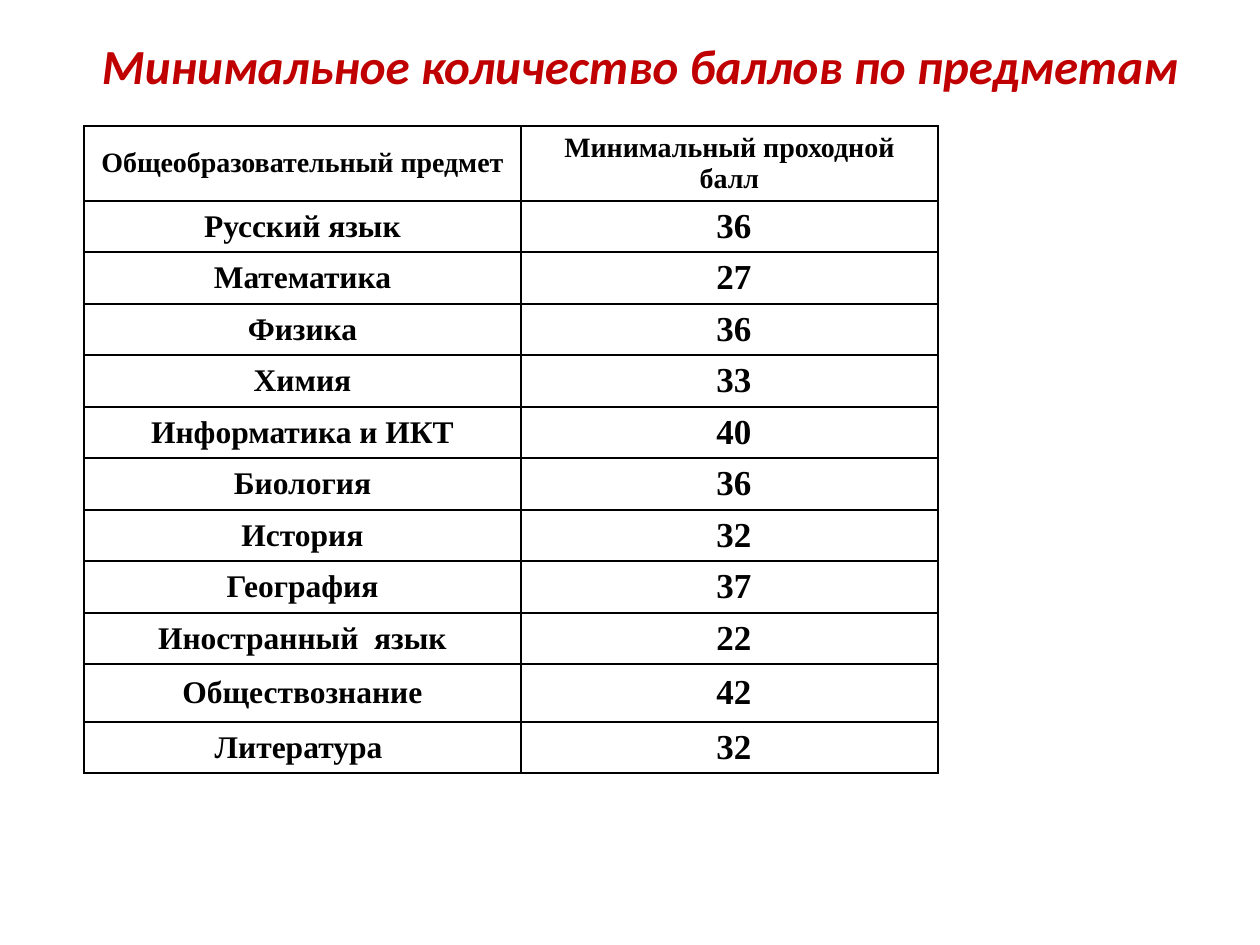
from dataclasses import dataclass

import pptx
import pptx.dml.color
import pptx.enum.text
import pptx.oxml
import pptx.oxml.ns
import pptx.util

EMU_PER_PX = 914400 // 126


def px(length):
    return pptx.util.Emu(length * EMU_PER_PX)


@dataclass(frozen=True)
class Theme:
    accent: str = "C00000"
    ink: str = "000000"
    title_font: str = "Calibri"
    table_font: str = "Times New Roman"
    title_size: int = 28
    header_size: int = 16
    subject_size: int = 18
    score_size: int = 20


class SlideBuilder:
    def __init__(self, slide, theme):
        self.slide = slide
        self.theme = theme

    def centred_text(self, frame, text, color, **font_format):
        paragraph = frame.paragraphs[0]
        paragraph.alignment = pptx.enum.text.PP_ALIGN.CENTER
        run = paragraph.add_run()
        run.text = text
        for name, value in font_format.items():
            setattr(run.font, name, value)
        run.font.color.rgb = pptx.dml.color.RGBColor.from_string(color)

    def title(self, text, left, top, width, height):
        heading = self.slide.shapes.title
        box = {"left": left, "top": top, "width": width, "height": height}
        for name, value in box.items():
            setattr(heading, name, px(value))
        frame = heading.text_frame
        frame.word_wrap = True
        frame.vertical_anchor = pptx.enum.text.MSO_ANCHOR.MIDDLE
        self.centred_text(frame, text, self.theme.accent, name=self.theme.title_font,
                          size=pptx.util.Pt(self.theme.title_size),
                          bold=True, italic=True)

    def border(self, cell):
        properties = cell._tc.get_or_add_tcPr()
        for position, side in enumerate(("lnL", "lnR", "lnT", "lnB")):
            line = pptx.oxml.parse_xml(
                f'<a:{side} {pptx.oxml.ns.nsdecls("a")} w="12700"><a:solidFill>'
                f'<a:srgbClr val="{self.theme.ink}"/></a:solidFill></a:{side}>')
            properties.insert(position, line)

    def cell(self, cell, text, size):
        cell.fill.background()
        cell.vertical_anchor = pptx.enum.text.MSO_ANCHOR.MIDDLE
        cell.margin_top = cell.margin_bottom = px(5)
        self.centred_text(cell.text_frame, text, self.theme.ink,
                          name=self.theme.table_font,
                          size=pptx.util.Pt(size), bold=True)
        self.border(cell)

    def table(self, header, rows, left, top, widths, heights):
        table = self.slide.shapes.add_table(
            len(heights), len(widths), px(left), px(top),
            px(sum(widths)), px(sum(heights))).table
        table.first_row = table.horz_banding = False
        for column, width in zip(table.columns, widths):
            column.width = px(width)
        header_sizes = (self.theme.header_size,) * 2
        body_sizes = (self.theme.subject_size, self.theme.score_size)
        for index, texts in enumerate([header, *rows]):
            table.rows[index].height = px(heights[index])
            sizes = body_sizes if index else header_sizes
            for column, (text, size) in enumerate(zip(texts, sizes)):
                self.cell(table.cell(index, column), text, size)


MINIMUM_SCORES = [
    ("Русский язык", " 36"),
    ("Математика", " 27"),
    ("Физика", " 36"),
    ("Химия", " 33"),
    ("Информатика и ИКТ", " 40"),
    ("Биология", " 36"),
    ("История", " 32"),
    ("География", " 37"),
    ("Иностранный  язык", " 22"),
    ("Обществознание", " 42"),
    ("Литература ", " 32"),
]


def main():
    presentation = pptx.Presentation()
    presentation.slide_width = px(1260)
    presentation.slide_height = px(945)
    slide = presentation.slides.add_slide(presentation.slide_layouts[5])
    builder = SlideBuilder(slide, Theme())
    builder.title("Минимальное количество баллов по предметам", 73, 0, 1134, 129)
    regular_heights = [51 + index % 2 for index in range(9)]
    builder.table(("Общеобразовательный предмет", "Минимальный проходной балл"),
                  MINIMUM_SCORES, 84, 126, widths=(437, 417),
                  heights=[75, *regular_heights, 58, 51])
    presentation.save("out.pptx")


if __name__ == "__main__":
    main()
